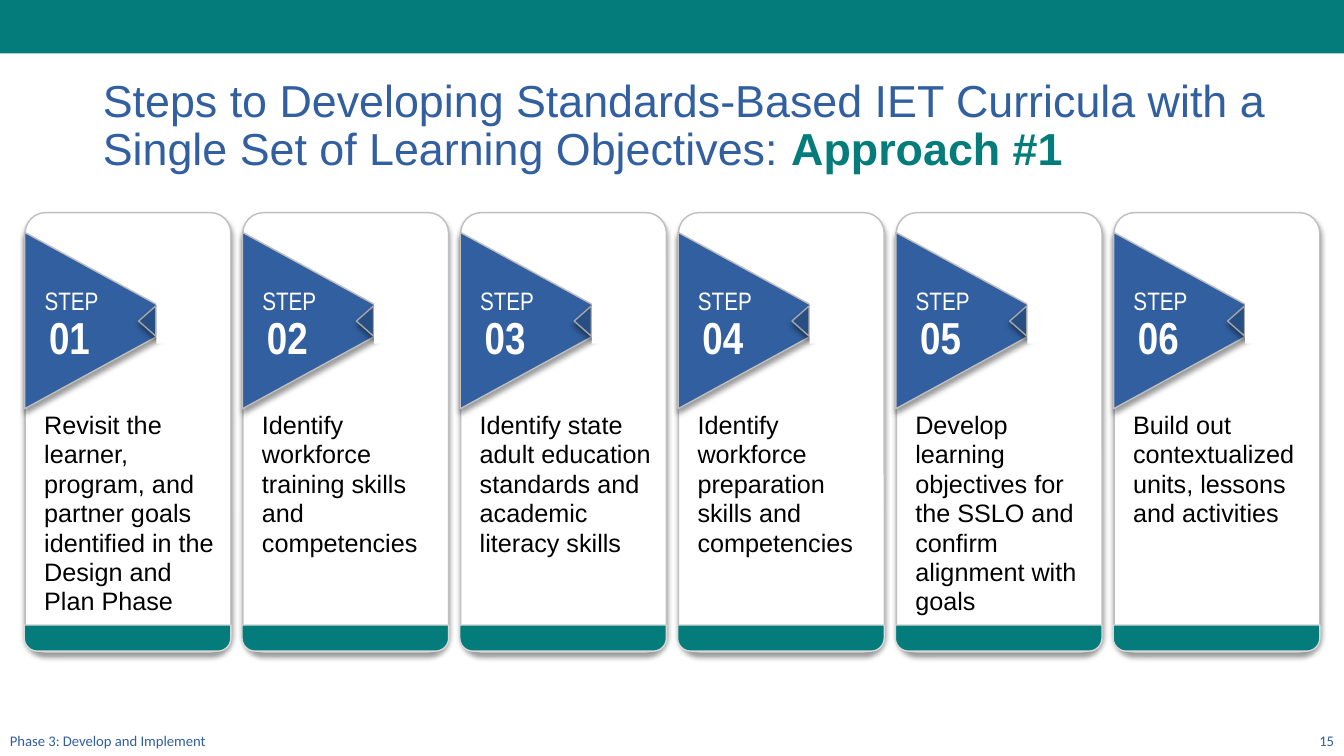
import pptx
import pptx.util
import pptx.dml.color
import pptx.enum.shapes
import pptx.enum.text
import pptx.oxml
import pptx.oxml.ns

Inches = pptx.util.Inches
Pt = pptx.util.Pt
Kind = pptx.enum.shapes.MSO_SHAPE
Align = pptx.enum.text.PP_ALIGN
Anchor = pptx.enum.text.MSO_ANCHOR

TITLE = [
    ("Steps to Developing Standards-Based IET Curricula with a "
     "Single Set of Learning Objectives: ", "blue", False),
    ("Approach #1", "teal", True),
]
STEPS = [
    "Revisit the learner, program, and partner goals identified in the Design and Plan Phase",
    "Identify workforce training skills and competencies",
    "Identify state adult education standards and academic literacy skills",
    "Identify workforce preparation skills and competencies",
    "Develop learning objectives for the SSLO and confirm alignment with goals",
    "Build out contextualized units, lessons and activities",
]
FOOTER = "Phase 3: Develop and Implement"
PAGE = "15"
COLORS = {
    "teal": "047C7C", "blue": "315F9F", "navy": "284F84", "white": "FFFFFF",
    "black": "000000", "edge": "BFBFBF", "fold": "A6A6A6", "rim": "D9D9D9",
}
LEFT, TOP, PITCH = 0.25, 2.11, 2.16


def color(name):
    return pptx.dml.color.RGBColor.from_string(COLORS[name])


def style(run, size, font, tint, bold=False):
    run.font.size = Pt(size)
    run.font.name = font
    run.font.bold = bold
    run.font.color.rgb = color(tint)


def add_text(parent, box, text, size=18, font="Arial", tint="black", bold=False,
             align=Align.LEFT, anchor=Anchor.TOP, wrap=True, space=None):
    frame = parent.add_textbox(*map(Inches, box)).text_frame
    frame.word_wrap = wrap
    frame.vertical_anchor = anchor
    para = frame.paragraphs[0]
    para.alignment = align
    if space:
        para.line_spacing = Pt(space)
    run = para.add_run()
    run.text = text
    style(run, size, font, tint, bold)


def add_shade(shape):
    effects = shape.element.spPr.find(pptx.oxml.ns.qn("a:effectLst"))
    effects.append(pptx.oxml.parse_xml(
        f'<a:outerShdw {pptx.oxml.ns.nsdecls("a")} blurRad="{Pt(4)}" dist="{Pt(3)}" '
        'dir="5400000" algn="t" rotWithShape="0"><a:srgbClr val="000000">'
        '<a:alpha val="40000"/></a:srgbClr></a:outerShdw>'))


def add_part(parent, kind, box, fill, line=None, turn=0, adjust=(), shade=False):
    shape = parent.add_shape(kind, *map(Inches, box))
    shape.shadow.inherit = False
    shape.fill.solid()
    shape.fill.fore_color.rgb = color(fill)
    if line:
        shape.line.color.rgb = color(line)
        shape.line.width = Pt(1)
    else:
        shape.line.fill.background()
    shape.rotation = turn
    for index, value in enumerate(adjust):
        shape.adjustments[index] = value
    if shade:
        add_shade(shape)


def add_card(slide, index, text):
    x = LEFT + index * PITCH
    card = slide.shapes.add_group_shape().shapes
    add_part(card, Kind.ROUNDED_RECTANGLE, (x, TOP, 2.04, 4.36), "white", "edge",
             adjust=[0.099], shade=True)
    add_part(card, Kind.ISOSCELES_TRIANGLE, (x - 0.08, TOP + 0.27, 1.75, 1.6),
             "blue", "edge", turn=90, shade=True)
    add_part(card, Kind.ISOSCELES_TRIANGLE, (x + 1.06, TOP + 0.99, 0.3, 0.17),
             "navy", "fold", turn=270, shade=True)
    add_part(card, Kind.RECTANGLE, (x + 1.3, TOP + 0.86, 0.45, 0.44), "white")
    label = dict(font="Arial Narrow", tint="white", align=Align.CENTER, wrap=False)
    add_text(card, (x + 0.09, TOP + 0.67, 0.74, 0.4), "STEP", **label)
    add_text(card, (x + 0.11, TOP + 0.91, 0.66, 0.64), f"{index + 1:02d}",
             size=32, bold=True, **label)
    add_text(card, (x + 0.09, TOP + 1.91, 1.94, 2.16), text, space=21)
    add_part(card, Kind.ROUND_2_SAME_RECTANGLE, (x - 0.01, TOP + 4.09, 2.05, 0.26),
             "teal", "rim", turn=180, adjust=[0.5, 0])


def add_title(slide):
    title = slide.shapes.title
    title.left, title.top, title.width, title.height = map(Inches, (0.92, 0.66, 11.86, 1.2))
    frame = title.text_frame
    frame.word_wrap = True
    frame.vertical_anchor = Anchor.MIDDLE
    para = frame.paragraphs[0]
    para.alignment = Align.LEFT
    para.line_spacing = 0.9
    for text, tint, bold in TITLE:
        run = para.add_run()
        run.text = text
        style(run, 32, "Arial", tint, bold)


def main():
    deck = pptx.Presentation()
    deck.slide_width, deck.slide_height = Inches(13.33), Inches(7.5)
    slide = deck.slides.add_slide(deck.slide_layouts[5])
    add_part(slide.shapes, Kind.RECTANGLE, (0, 0, 13.33, 0.53), "teal")
    add_title(slide)
    for index, text in enumerate(STEPS):
        add_card(slide, index, text)
    small = dict(size=10.5, font="Calibri", tint="blue", anchor=Anchor.BOTTOM)
    add_text(slide.shapes, (0, 7.17, 4.5, 0.31), FOOTER, **small)
    add_text(slide.shapes, (10.33, 7.17, 3, 0.31), PAGE, align=Align.RIGHT, **small)
    deck.save("out.pptx")


if __name__ == "__main__":
    main()
